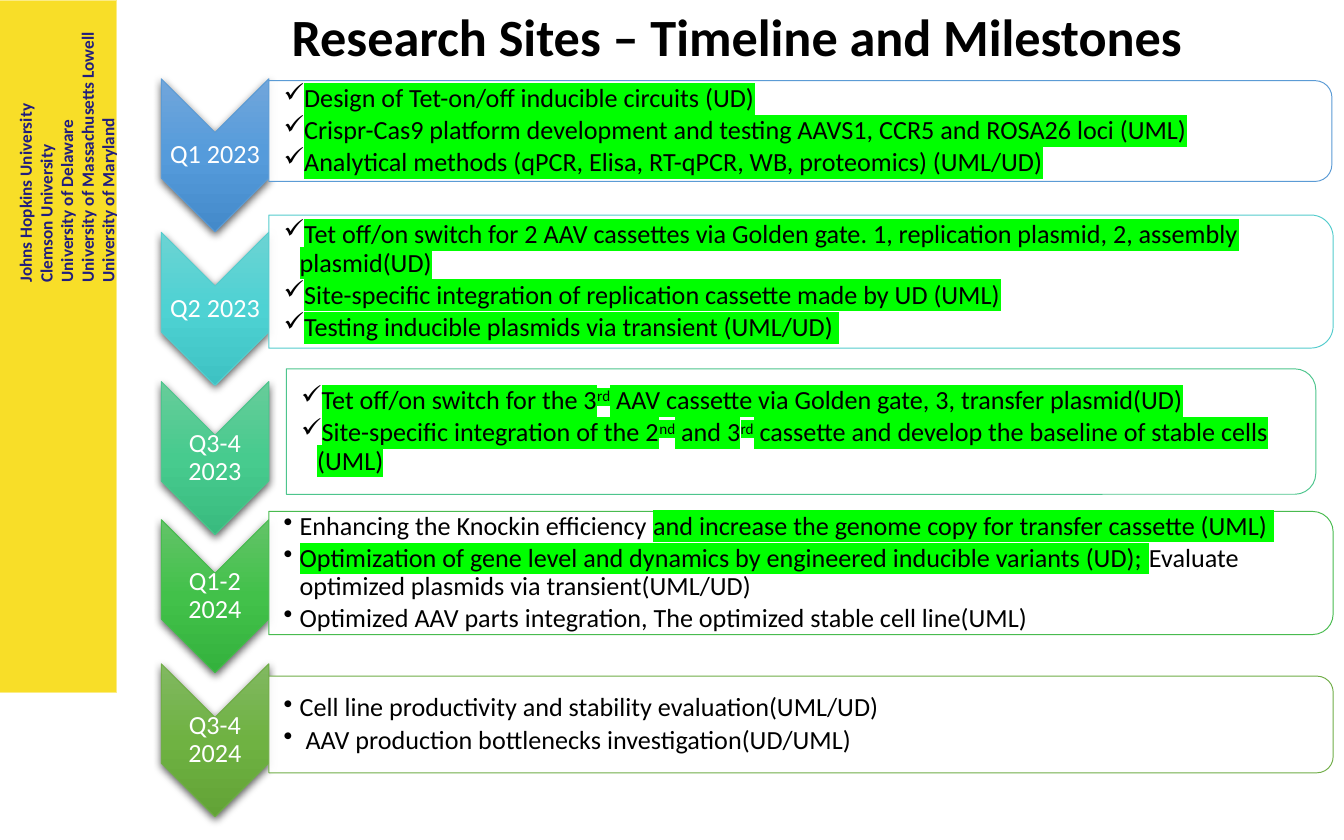
from dataclasses import dataclass

from lxml import etree
from pptx import Presentation
from pptx.dml.color import RGBColor
from pptx.enum import shapes, text
from pptx.oxml import ns, parse_xml
from pptx.util import Pt

COLORS = {
    "black": "000000",
    "white": "FFFFFF",
    "sidebar": "F8DE28",
    "sidebar_edge": "FBEC85",
    "navy": "211D7D",
    "done": "00FF00",
    "blue": "5B9BD5",
    "teal": "54CCCD",
    "mint": "4DC58D",
    "green": "48BB4F",
    "olive": "70AD47",
}
GRADIENTS = {
    "blue": ("71A6DB", "559BDB", "448ACA"),
    "teal": ("6CD3D3", "4ED2D3", "3EC2C3"),
    "mint": ("67CC9A", "47CB8E", "39BB7F"),
    "green": ("63C368", "42C14A", "34B23D"),
    "olive": ("81B861", "6FB242", "62A336"),
}
FONT = "Calibri"
A_NS = 'xmlns:a="http://schemas.openxmlformats.org/drawingml/2006/main"'
CHEVRON_X, CHEVRON_W, CHEVRON_H = 115.2, 82, 57.6
CHECK, DOT = "✓", "•"

# Run styles: done items are highlighted, ordinals are raised as well
DONE, ORDINAL, OPEN = "done", "ordinal", "open"

UNIVERSITIES = [
    "Johns Hopkins University",
    "Clemson University",
    "University of Delaware",
    "University of Massachusetts Lowell",
    "University of Maryland",
]


@dataclass
class Milestone:
    period: str
    color: str
    chevron_y: float
    card: tuple  # left, top, width, height
    bullet: str
    tasks: list  # one list of (words, style) per task


MILESTONES = [
    Milestone("Q1 2023", "blue", 83.2, (144, 43.2, 569.5, 54), CHECK, [
        [("Design of Tet-on/off inducible circuits (UD)", DONE)],
        [("Crispr-Cas9 platform development and testing AAVS1, CCR5 and ROSA26 loci (UML)", DONE)],
        [("Analytical methods (qPCR, Elisa, RT-qPCR, WB, proteomics) (UML/UD)", DONE)],
    ]),
    Milestone("Q2 2023", "teal", 165.4, (144, 115.2, 570.2, 71.3), CHECK, [
        [("Tet off/on switch for 2 AAV cassettes via Golden gate. 1, replication plasmid, "
          "2, assembly plasmid(UD)", DONE)],
        [("Site-specific integration of replication cassette made by UD (UML)", DONE)],
        [("Testing inducible plasmids via transient (UML/UD) ", DONE)],
    ]),
    Milestone("Q3-4 2023", "mint", 245.4, (153.4, 197.6, 551.5, 67.2), CHECK, [
        [("Tet off/on switch for the 3", DONE), ("rd", ORDINAL),
         (" AAV cassette via Golden gate, 3, transfer plasmid(UD)", DONE)],
        [("Site-specific integration of the 2", DONE), ("nd", ORDINAL),
         (" and 3", DONE), ("rd", ORDINAL),
         (" cassette and develop the baseline of stable cells (UML)", DONE)],
    ]),
    Milestone("Q1-2 2024", "green", 319.4, (144, 274, 570.2, 66), DOT, [
        [("Enhancing the Knockin efficiency ", OPEN),
         ("and increase the genome copy for transfer cassette (UML) ", DONE)],
        [("Optimization of gene level and dynamics by engineered inducible variants (UD); ", DONE),
         ("Evaluate optimized plasmids via transient(UML/UD)", OPEN)],
        [("Optimized AAV parts integration, The optimized stable cell line(UML)", OPEN)],
    ]),
    Milestone("Q3-4 2024", "olive", 396.6, (144, 362.2, 570.2, 51.8), DOT, [
        [("Cell line productivity and stability evaluation(UML/UD)", OPEN)],
        [(" AAV production bottlenecks investigation(UD/UML)", OPEN)],
    ]),
]


def rgb(name):
    return RGBColor.from_string(COLORS[name])


def add_panel(slide, kind, center, size, fill, line, rotation=0):
    (x, y), (width, height) = center, size
    panel = slide.shapes.add_shape(kind, Pt(x - width / 2), Pt(y - height / 2),
                                   Pt(width), Pt(height))
    panel.rotation = rotation
    panel.shadow.inherit = False
    panel.fill.solid()
    panel.fill.fore_color.rgb = rgb(fill)
    panel.line.color.rgb = rgb(line)
    panel.line.width = Pt(0.5)
    return panel


def add_text_frame(slide, left, top, width, height, insets, wrap=True):
    box = slide.shapes.add_textbox(Pt(left), Pt(top), Pt(width), Pt(height))
    frame = box.text_frame
    frame.word_wrap = wrap
    frame.margin_left, frame.margin_top, frame.margin_right, frame.margin_bottom = map(Pt, insets)
    return box, frame


def next_paragraph(frame, index):
    return frame.add_paragraph() if index else frame.paragraphs[0]


def style(paragraph, size, color, bold=False):
    paragraph.font.name = FONT
    paragraph.font.size = Pt(size)
    paragraph.font.bold = bold
    paragraph.font.color.rgb = rgb(color)


def add_chevron(slide, milestone):
    center = (CHEVRON_X, milestone.chevron_y)
    chevron = add_panel(slide, shapes.MSO_SHAPE.CHEVRON, center, (CHEVRON_W, CHEVRON_H),
                        milestone.color, milestone.color, 90)
    properties = chevron.fill._xPr
    stops = "".join(
        f'<a:gs pos="{i * 50000}"><a:srgbClr val="{color}"/></a:gs>'
        for i, color in enumerate(GRADIENTS[milestone.color]))
    gradient = parse_xml(f'<a:gradFill {A_NS} rotWithShape="0"><a:gsLst>{stops}</a:gsLst>'
                         '<a:lin ang="5400000" scaled="0"/></a:gradFill>')
    properties.replace(properties.find(ns.qn("a:solidFill")), gradient)
    shadow = parse_xml(
        f'<a:outerShdw {A_NS} blurRad="57150" dist="19050" dir="5400000" algn="ctr" '
        'rotWithShape="0"><a:srgbClr val="000000"><a:alpha val="63000"/></a:srgbClr>'
        '</a:outerShdw>')
    properties.find(ns.qn("a:effectLst")).append(shadow)

    # Period label, level inside the turned chevron
    _, frame = add_text_frame(slide, CHEVRON_X - CHEVRON_H / 2, milestone.chevron_y - 12,
                              CHEVRON_H, 24, (0.7,) * 4)
    frame.vertical_anchor = text.MSO_ANCHOR.MIDDLE
    period = frame.paragraphs[0]
    period.text = milestone.period
    period.alignment = text.PP_ALIGN.CENTER
    period.line_spacing = 0.9
    style(period, 14, "white")


def add_task(paragraph, bullet, runs):
    paragraph.line_spacing = 0.9
    paragraph.space_after = Pt(2.1)
    properties = paragraph._p.get_or_add_pPr()
    properties.set("marL", str(Pt(8.64)))
    properties.set("indent", str(-Pt(8.64)))
    etree.SubElement(properties, ns.qn("a:buChar")).set("char", bullet)
    style(paragraph, 14, "black")
    for words, state in runs:
        run = paragraph.add_run()
        run.text = words
        run_properties = run._r.get_or_add_rPr()
        if state != OPEN:
            highlight = etree.SubElement(run_properties, ns.qn("a:highlight"))
            etree.SubElement(highlight, ns.qn("a:srgbClr")).set("val", COLORS["done"])
        if state == ORDINAL:
            run_properties.set("baseline", "30000")


def add_card(slide, milestone):
    left, top, width, height = milestone.card
    card = add_panel(slide, shapes.MSO_SHAPE.ROUND_2_SAME_RECTANGLE,
                     (left + width / 2, top + height / 2), (height, width),
                     "white", milestone.color, 90)
    white = card.fill._xPr.find(ns.qn("a:solidFill"))[0]
    etree.SubElement(white, ns.qn("a:alpha")).set("val", "90000")

    _, frame = add_text_frame(slide, left, top + 2.5, width - 3, height - 5,
                              (7.9, 0.7, 0.7, 0.7))
    frame.vertical_anchor = text.MSO_ANCHOR.MIDDLE
    for i, runs in enumerate(milestone.tasks):
        add_task(next_paragraph(frame, i), milestone.bullet, runs)


def add_sidebar(slide):
    add_panel(slide, shapes.MSO_SHAPE.RECTANGLE, (31.3, 185.4), (62.6, 370.8),
              "sidebar", "sidebar_edge")
    box, frame = add_text_frame(slide, -43.2, 56.2, 149.8, 54.7, (7.2, 3.6, 7.2, 3.6), wrap=False)
    box.rotation = 270
    for i, university in enumerate(UNIVERSITIES):
        line = next_paragraph(frame, i)
        line.text = university
        style(line, 9.2, "navy", bold=True)


def add_title(slide):
    _, frame = add_text_frame(slide, 110.9, -1.4, 567.4, 41, (7.2, 3.6, 7.2, 3.6))
    title = frame.paragraphs[0]
    title.text = "Research Sites – Timeline and Milestones"
    title.alignment = text.PP_ALIGN.CENTER
    style(title, 28, "black", bold=True)


def main():
    deck = Presentation()
    deck.slide_width, deck.slide_height = Pt(720), Pt(450)
    slide = deck.slides.add_slide(deck.slide_layouts[6])
    add_sidebar(slide)
    for milestone in MILESTONES:
        add_chevron(slide, milestone)
        add_card(slide, milestone)
    add_title(slide)
    deck.save("out.pptx")


if __name__ == "__main__":
    main()
